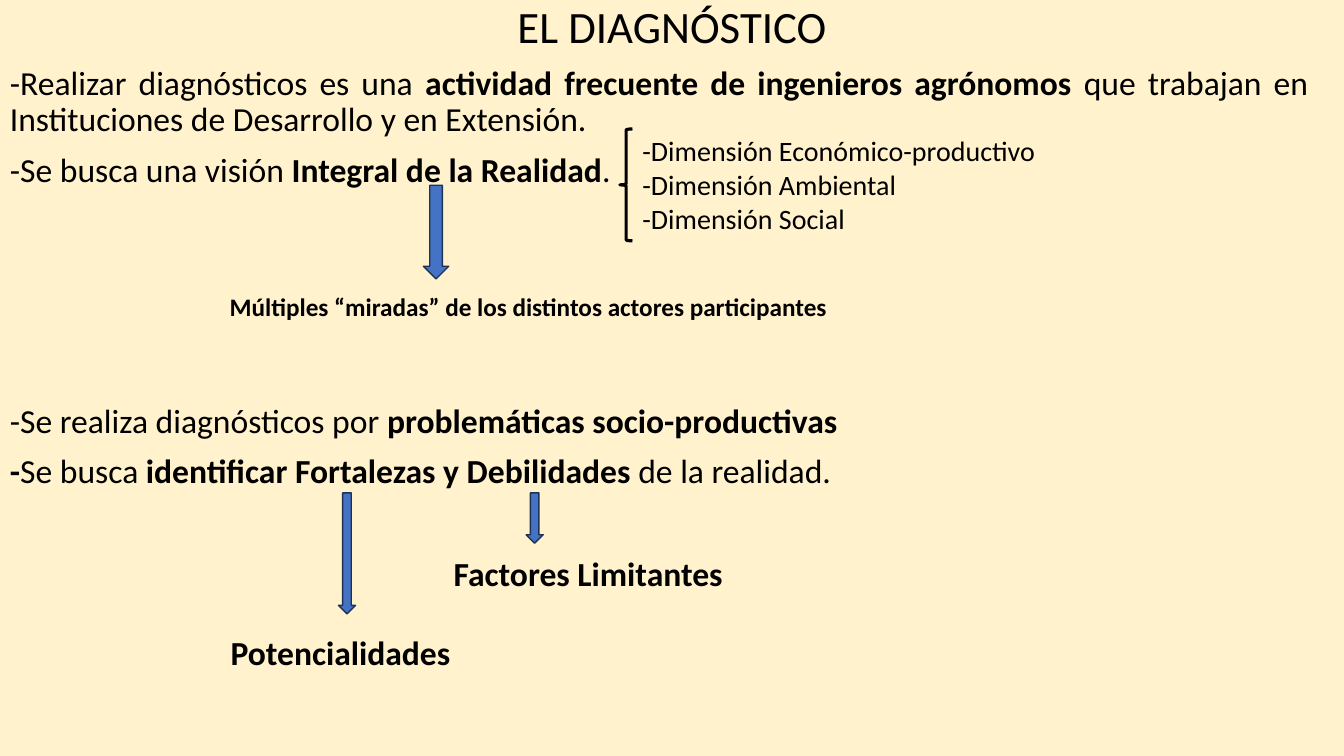
from collections import namedtuple

from lxml import etree
from pptx import Presentation
from pptx import util as u
from pptx.dml.color import RGBColor
from pptx.enum import shapes, text
from pptx.oxml import ns

COLORS = {"background": "FFF2CC", "ink": "000000", "arrow": "4472C4", "arrow_edge": "1E3256"}
FONT = "Calibri"
Box = namedtuple("Box", "left top width height")
PAGE = Box(0, 0, 33.87, 19.05)

STATEMENTS = [
    (0, [("-Realizar diagnósticos es una ", False),
         ("actividad frecuente de ingenieros agrónomos ", True),
         ("que trabajan en Instituciones de Desarrollo y en Extensión.", False)]),
    (10, [("-Se busca una visión ", False), ("Integral de la Realidad", True), (".", False)]),
    (153.5, [("-Se realiza diagnósticos por ", False), ("problemáticas socio-productivas", True)]),
    (10, [("-", True), ("Se busca ", False), ("identificar Fortalezas y Debilidades ", True),
          ("de la realidad.", False)]),
]
DIMENSIONS = ["-Dimensión Económico-productivo", "-Dimensión Ambiental", "-Dimensión Social"]
BRANCHES = [
    ("Múltiples “miradas” de los distintos actores participantes", 18,
     Box(5.54, 4.67, 18.42, 3.56), Box(5.13, 0, 0.64, 2.36)),
    ("Factores Limitantes", 24, Box(11.18, 12.42, 10.21, 2.67), Box(2.08, 0, 0.43, 1.27)),
    ("Potencialidades", 24, Box(5.56, 12.42, 6.38, 4.65), Box(2.97, 0, 0.43, 3.05)),
]


def color(name):
    """Return the named colour of the palette."""
    return RGBColor.from_string(COLORS[name])


def lengths(box):
    """Convert a box in centimetres to slide lengths."""
    return [u.Cm(side) for side in box]


def style(paragraph, size, bold=None):
    """Set the font shared by all runs of a paragraph."""
    paragraph.font.name = FONT
    paragraph.font.size = u.Pt(size)
    paragraph.font.bold = bold
    paragraph.font.color.rgb = color("ink")


def add_lines(slide, box, lines, size, bold=None):
    """Place plain lines of text in a box."""
    frame = slide.shapes.add_textbox(*lengths(box)).text_frame
    frame.word_wrap = True
    frame.text = "\n".join(lines)
    for paragraph in frame.paragraphs:
        style(paragraph, size, bold)


def add_heading(slide, box):
    """Place the slide title at the top of its box."""
    heading = slide.shapes.title
    heading.left, heading.top, heading.width, heading.height = lengths(box)
    frame = heading.text_frame
    frame.text = "EL DIAGNÓSTICO"
    frame.auto_size = text.MSO_AUTO_SIZE.NONE
    frame.vertical_anchor = text.MSO_ANCHOR.TOP
    paragraph = frame.paragraphs[0]
    paragraph.alignment = text.PP_ALIGN.CENTER
    paragraph.line_spacing = 0.9
    paragraph.space_before = u.Pt(0)
    style(paragraph, 32)


def add_statements(slide, box):
    """Place the justified statements with their bold passages."""
    frame = slide.shapes.add_textbox(*lengths(box)).text_frame
    frame.word_wrap = True
    for index, (gap, passages) in enumerate(STATEMENTS):
        paragraph = frame.add_paragraph() if index else frame.paragraphs[0]
        paragraph.alignment = text.PP_ALIGN.JUSTIFY
        paragraph.line_spacing = 0.9
        paragraph.space_before = u.Pt(gap)
        style(paragraph, 24)
        for words, bold in passages:
            run = paragraph.add_run()
            run.text = words
            run.font.bold = bold


def add_dimensions(slide, box):
    """Place a brace and the list of dimensions to its right."""
    brace_width = 0.32
    brace = slide.shapes.add_shape(
        shapes.MSO_SHAPE.LEFT_BRACE, *lengths(box._replace(width=brace_width)))
    brace.shadow.inherit = False
    brace.fill.background()
    brace.line.color.rgb = color("ink")
    brace.line.width = u.Pt(2.25)
    listing = box._replace(left=box.left + brace_width, width=box.width - brace_width)
    add_lines(slide, listing, DIMENSIONS, 20)


def add_branch(slide, box, label, size, arrow_box):
    """Place a down arrow in the box and its label along the bottom."""
    label_height = 1.02 if size < 20 else 1.27
    label_box = box._replace(top=box.top + box.height - label_height, height=label_height)
    add_lines(slide, label_box, [label], size, True)
    arrow_place = arrow_box._replace(left=box.left + arrow_box.left, top=box.top + arrow_box.top)
    arrow = slide.shapes.add_shape(shapes.MSO_SHAPE.DOWN_ARROW, *lengths(arrow_place))
    arrow.shadow.inherit = False
    arrow.fill.solid()
    arrow.fill.fore_color.rgb = color("arrow")
    arrow.line.color.rgb = color("arrow_edge")
    arrow.line.width = u.Pt(1)


def main():
    """Build and save the slide."""
    deck = Presentation()
    deck.slide_width, deck.slide_height = u.Cm(PAGE.width), u.Cm(PAGE.height)
    slide = deck.slides.add_slide(deck.slide_layouts.get_by_name("Title Only"))
    slide.background.fill.solid()
    slide.background.fill.fore_color.rgb = color("background")
    add_heading(slide, PAGE._replace(height=1.5))
    add_statements(slide, Box(0, 1.55, 33.22, 11))
    add_dimensions(slide, Box(15.62, 3.25, 11.43, 2.82))
    for label, size, box, arrow_box in BRANCHES:
        add_branch(slide, box, label, size, arrow_box)
    deck.save("out.pptx")


if __name__ == "__main__":
    main()
